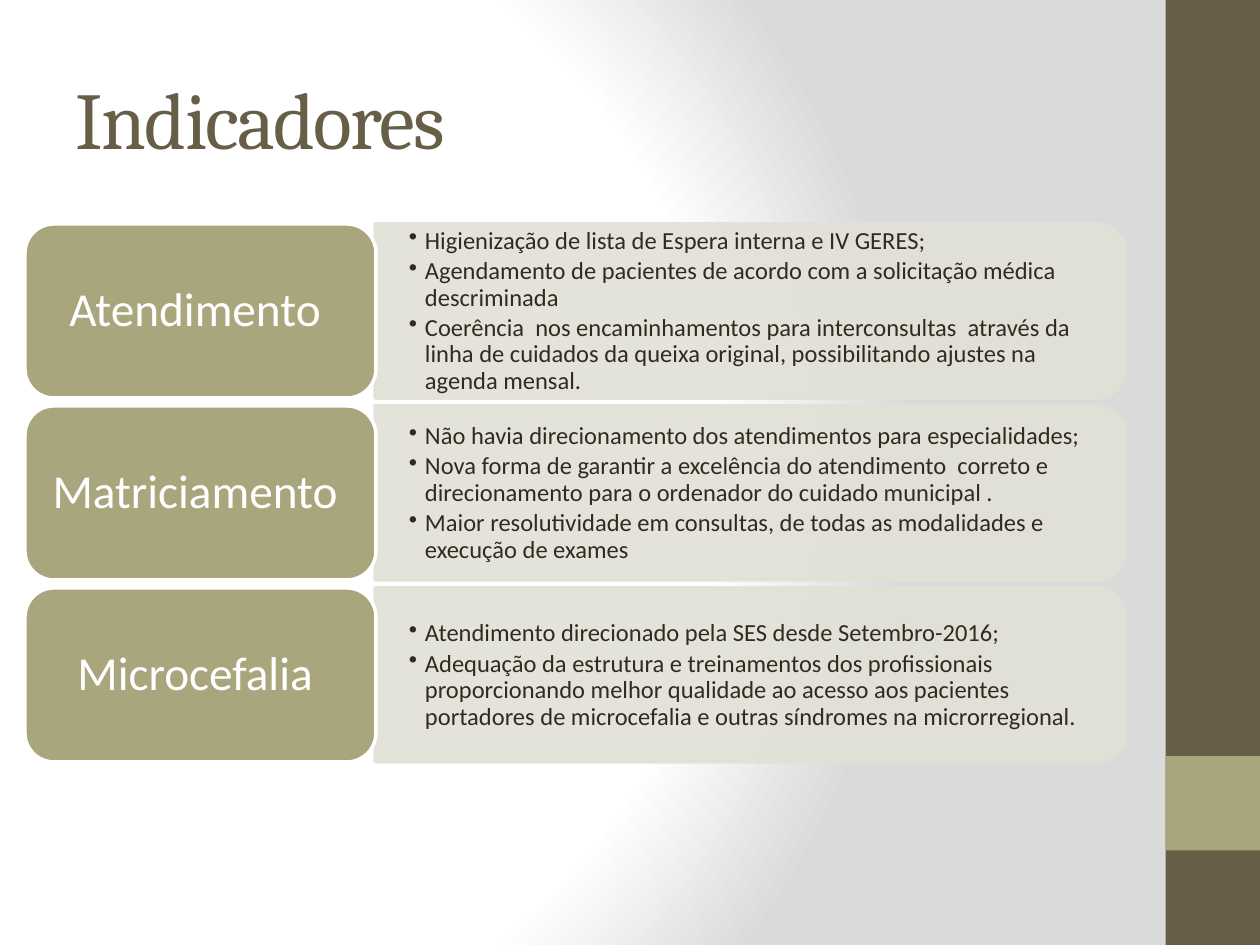
from dataclasses import dataclass

from lxml import etree
from pptx import Presentation
from pptx.dml.color import RGBColor
from pptx.enum.shapes import MSO_SHAPE
from pptx.enum.text import MSO_ANCHOR, PP_ALIGN
from pptx.oxml.ns import qn
from pptx.util import Emu, Pt

RECT = MSO_SHAPE.RECTANGLE
ROUNDED = MSO_SHAPE.ROUNDED_RECTANGLE
TWO_ROUNDED = MSO_SHAPE.ROUND_2_SAME_RECTANGLE
MIDDLE = MSO_ANCHOR.MIDDLE
LEFT, CENTER = PP_ALIGN.LEFT, PP_ALIGN.CENTER

PX_PER_INCH = 126
SLIDE_W, SLIDE_H = 1260, 945

# Row grid, in px
ROW_TOP, ROW_PITCH, ROW_H = 224, 182, 174
LABEL_X, LABEL_W = 25, 351
PANEL_X, PANEL_W = 375, 750
BULLET_INDENT = 16


@dataclass(frozen=True)
class Theme:
    brown: str = "675E47"
    olive: str = "A9A57C"
    panel: str = "E2E1D7"
    white: str = "FFFFFF"
    gray: str = "DADADA"
    ink: str = "2F2B20"
    heading_font: str = "Cambria"
    body_font: str = "Calibri"
    title_size: int = 46
    label_size: int = 27
    bullet_size: int = 14
    line_width: int = 2
    panel_opacity: int = 90


THEME = Theme()

INDICATORS = [
    ("Atendimento ", [
        "Higienização de lista de Espera interna e IV GERES;",
        "Agendamento de pacientes de acordo com a solicitação médica descriminada",
        "Coerência  nos encaminhamentos para interconsultas  através da linha de "
        "cuidados da queixa original, possibilitando ajustes na agenda mensal.",
    ]),
    ("Matriciamento ", [
        "Não havia direcionamento dos atendimentos para especialidades;",
        "Nova forma de garantir a excelência do atendimento  correto e "
        "direcionamento para o ordenador do cuidado municipal .",
        "Maior resolutividade em consultas, de todas as modalidades e execução de exames",
    ]),
    ("Microcefalia ", [
        "Atendimento direcionado pela SES desde Setembro-2016;",
        "Adequação da estrutura e treinamentos dos profissionais proporcionando "
        "melhor qualidade ao acesso aos pacientes portadores de microcefalia e "
        "outras síndromes na microrregional.",
    ]),
]


def px(value):
    return Emu(round(value * 914400 / PX_PER_INCH))


def rgb(color):
    return RGBColor.from_string(color)


def set_opacity(color_parent, percent):
    """Make the solid colour under the given element translucent."""
    color = color_parent.find(qn("a:solidFill")).find(qn("a:srgbClr"))
    etree.SubElement(color, qn("a:alpha"), val=str(percent * 1000))


def paint_background(slide):
    """Radial gradient from white to gray."""
    slide.background.fill.gradient()
    gradient = next(slide.element.iter(qn("a:gradFill")))
    for child in list(gradient):
        gradient.remove(child)
    stops = etree.SubElement(gradient, qn("a:gsLst"))
    for position, color in [(0, THEME.white), (75, THEME.white), (100, THEME.gray)]:
        stop = etree.SubElement(stops, qn("a:gs"), pos=str(position * 1000))
        etree.SubElement(stop, qn("a:srgbClr"), val=color)
    circle = etree.SubElement(gradient, qn("a:path"), {"path": "circle"})
    etree.SubElement(circle, qn("a:fillToRect"),
                     l="20000", t="50000", r="100000", b="50000")


def add_block(slide, kind, x, y, w, h, fill, line=None):
    block = slide.shapes.add_shape(kind, px(x), px(y), px(w), px(h))
    block.shadow.inherit = False
    block.fill.solid()
    block.fill.fore_color.rgb = rgb(fill)
    if line:
        block.line.color.rgb = rgb(line)
        block.line.width = Pt(THEME.line_width)
    else:
        block.line.fill.background()
    return block


def set_up_frame(frame, inset_x, inset_y):
    frame.word_wrap = True
    frame.vertical_anchor = MIDDLE
    frame.margin_left = frame.margin_right = px(inset_x)
    frame.margin_top = frame.margin_bottom = px(inset_y)


def add_text_box(slide, x, y, w, h, inset_x, inset_y):
    frame = slide.shapes.add_textbox(px(x), px(y), px(w), px(h)).text_frame
    set_up_frame(frame, inset_x, inset_y)
    return frame


def write(paragraph, text, size, font, color, align=LEFT):
    paragraph.alignment = align
    run = paragraph.add_run()
    run.text = text
    run.font.size = Pt(size)
    run.font.name = font
    run.font.color.rgb = rgb(color)
    return run


def add_title(slide, text):
    frame = add_text_box(slide, 63, 38, 1050, 158, 13, 6)
    run = write(frame.paragraphs[0], text, THEME.title_size,
                THEME.heading_font, THEME.brown)
    run.font._element.set("spc", "-100")


def add_panel(slide, top):
    """Panel rounded on its right side: an upright shape turned by 90 degrees."""
    x = PANEL_X + (PANEL_W - ROW_H) / 2
    y = top + (ROW_H - PANEL_W) / 2
    panel = add_block(slide, TWO_ROUNDED, x, y, ROW_H, PANEL_W,
                      THEME.panel, THEME.panel)
    panel.rotation = 90
    properties = panel.element.spPr
    set_opacity(properties, THEME.panel_opacity)
    set_opacity(properties.find(qn("a:ln")), THEME.panel_opacity)


def add_bullets(slide, top, items):
    frame = add_text_box(slide, PANEL_X, top + 9, PANEL_W - 9, ROW_H - 17, 34, 18)
    for index, item in enumerate(items):
        paragraph = frame.add_paragraph() if index else frame.paragraphs[0]
        paragraph.level = 1
        paragraph.line_spacing = 0.9
        paragraph.space_after = Pt(2.1)
        write(paragraph, item, THEME.bullet_size, THEME.body_font, THEME.ink)
        properties = paragraph._p.get_or_add_pPr()
        properties.set("marL", str(px(BULLET_INDENT)))
        properties.set("indent", str(px(-BULLET_INDENT)))
        etree.SubElement(properties, qn("a:buChar"), char="•")


def add_label(slide, top, text):
    label = add_block(slide, ROUNDED, LABEL_X, top, LABEL_W, ROW_H,
                      THEME.olive, THEME.white)
    set_up_frame(label.text_frame, 14, 7)
    paragraph = label.text_frame.paragraphs[0]
    paragraph.line_spacing = 0.9
    write(paragraph, text, THEME.label_size, THEME.body_font, THEME.white, CENTER)


def main():
    prs = Presentation()
    prs.slide_width, prs.slide_height = px(SLIDE_W), px(SLIDE_H)
    slide = prs.slides.add_slide(prs.slide_layouts[6])

    # Background and side band
    paint_background(slide)
    band_w = 94.5
    band_x = SLIDE_W - band_w
    add_block(slide, RECT, band_x, 0, band_w, SLIDE_H, THEME.brown)
    add_block(slide, RECT, band_x, 756, band_w, band_w, THEME.olive)

    add_title(slide, "Indicadores")

    # One row per indicator
    for row, (name, items) in enumerate(INDICATORS):
        top = ROW_TOP + row * ROW_PITCH
        add_panel(slide, top)
        add_bullets(slide, top, items)
        add_label(slide, top, name)

    prs.save("out.pptx")


if __name__ == "__main__":
    main()
